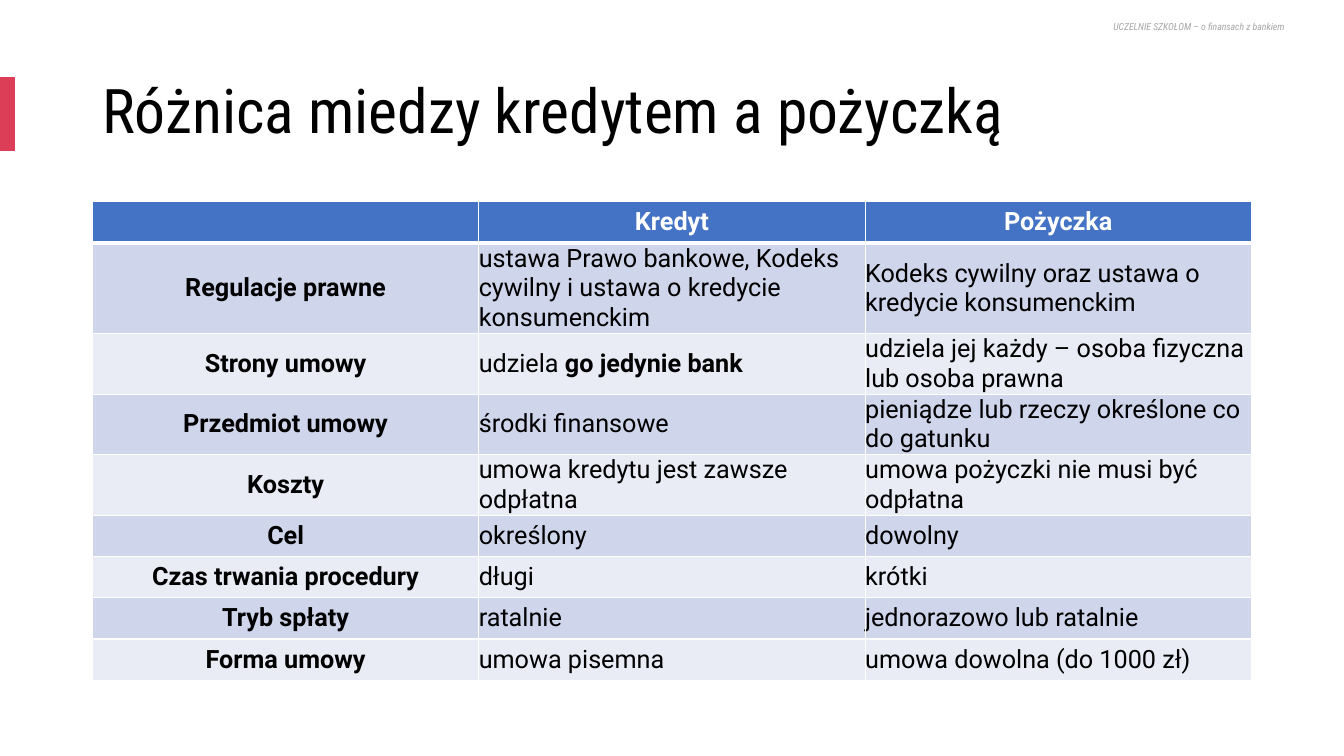
"""Build a slide with a table comparing a credit with a loan."""
from lxml import etree
from pptx import Presentation
from pptx.dml.color import RGBColor
from pptx.enum.shapes import MSO_SHAPE
from pptx.enum.text import MSO_ANCHOR, PP_ALIGN
from pptx.oxml.ns import qn
from pptx.util import Cm, Pt

RECTANGLE = MSO_SHAPE.RECTANGLE
MIDDLE, TOP = MSO_ANCHOR.MIDDLE, MSO_ANCHOR.TOP
LEFT, CENTER = PP_ALIGN.LEFT, PP_ALIGN.CENTER
COLORS = {
    "text": "000000",
    "white": "FFFFFF",
    "header": "4472C4",
    "odd": "CFD5EA",
    "even": "E9EBF5",
    "accent": "DB3E56",
    "note": "A6A6A6",
}
ROWS = [
    ("", "Kredyt", "Pożyczka"),
    ("Regulacje prawne",
     "ustawa Prawo bankowe, Kodeks cywilny i ustawa o kredycie konsumenckim",
     "Kodeks cywilny oraz ustawa o kredycie konsumenckim"),
    ("Strony umowy", "udziela **go jedynie bank",
     "udziela jej każdy – osoba fizyczna lub osoba prawna"),
    ("Przedmiot umowy", "środki finansowe",
     "pieniądze lub rzeczy określone co do gatunku"),
    ("Koszty", "umowa kredytu jest zawsze odpłatna",
     "umowa pożyczki nie musi być odpłatna"),
    ("Cel", "określony", "dowolny"),
    ("Czas trwania procedury", "długi", "krótki"),
    ("Tryb spłaty", "ratalnie", "jednorazowo lub ratalnie"),
    ("Forma umowy", "umowa pisemna", "umowa dowolna (do 1000 zł)"),
]


def add_span(para, text, color, **font_values):
    """Add a run with the given colour and font values."""
    span = para.add_run()
    span.text = text
    span.font.color.rgb = RGBColor.from_string(COLORS[color])
    for name, value in font_values.items():
        setattr(span.font, name, value)


def add_border(cell, position, side, points):
    """Draw one white edge of a table cell."""
    line = etree.Element(qn(f"a:ln{side}"), w=str(Pt(points)))
    fill = etree.SubElement(line, qn("a:solidFill"))
    etree.SubElement(fill, qn("a:srgbClr"), val=COLORS["white"])
    cell._tc.get_or_add_tcPr().insert(position, line)


deck = Presentation()
deck.slide_width, deck.slide_height = Cm(33.87), Cm(19.05)
page = deck.slides.add_slide(deck.slide_layouts[6])

TEXTS = [
    ("Różnica miedzy kredytem a pożyczką", (2.33, 1.01, 29.21, 3.68), MIDDLE, 0.9,
     "text", {"size": Pt(44)}),
    ("UCZELNIE SZKOŁOM – o finansach z bankiem", (27.81, 0.41, 5.21, 0.55), TOP, 1.0,
     "note", {"size": Pt(7), "italic": True}),
]
for text, place, anchor, spacing, color, font_values in TEXTS:
    box = page.shapes.add_textbox(*map(Cm, place))
    box.text_frame.word_wrap = True
    box.text_frame.vertical_anchor = anchor
    para = box.text_frame.paragraphs[0]
    para.line_spacing = spacing
    add_span(para, text, color, name="Roboto Condensed", **font_values)

table = page.shapes.add_table(
    len(ROWS), 3, Cm(2.33), Cm(5.08), Cm(29.21), Cm(1.04 * len(ROWS))
).table
for row_index, row in enumerate(ROWS):
    is_header = row_index == 0
    band = "header" if is_header else ("even", "odd")[row_index % 2]
    borders = {
        "L": 1,
        "R": 1,
        "T": 3 if row_index == 1 else 1,
        "B": 3 if is_header else 1,
    }
    for column_index, text in enumerate(row):
        cell = table.cell(row_index, column_index)
        cell.fill.solid()
        cell.fill.fore_color.rgb = RGBColor.from_string(COLORS[band])
        cell.vertical_anchor = MIDDLE
        for side in ("left", "top", "right", "bottom"):
            setattr(cell, f"margin_{side}", 0)
        for position, (side, points) in enumerate(borders.items()):
            add_border(cell, position, side, points)
        is_label = is_header or column_index == 0
        para = cell.text_frame.paragraphs[0]
        para.alignment = CENTER if is_label else LEFT
        para.font.size = Pt(18)
        for part_index, part in enumerate(text.split("**")):
            if part:
                add_span(para, part, "white" if is_header else "text",
                         name="Roboto", size=Pt(18), bold=is_label or part_index == 1)

marker = page.shapes.add_shape(RECTANGLE, Cm(0), Cm(1.96), Cm(0.36), Cm(1.83))
marker.shadow.inherit = False
marker.fill.solid()
marker.fill.fore_color.rgb = RGBColor.from_string(COLORS["accent"])
marker.line.color.rgb = RGBColor.from_string(COLORS["accent"])
marker.line.width = Pt(1)

deck.save("out.pptx")
